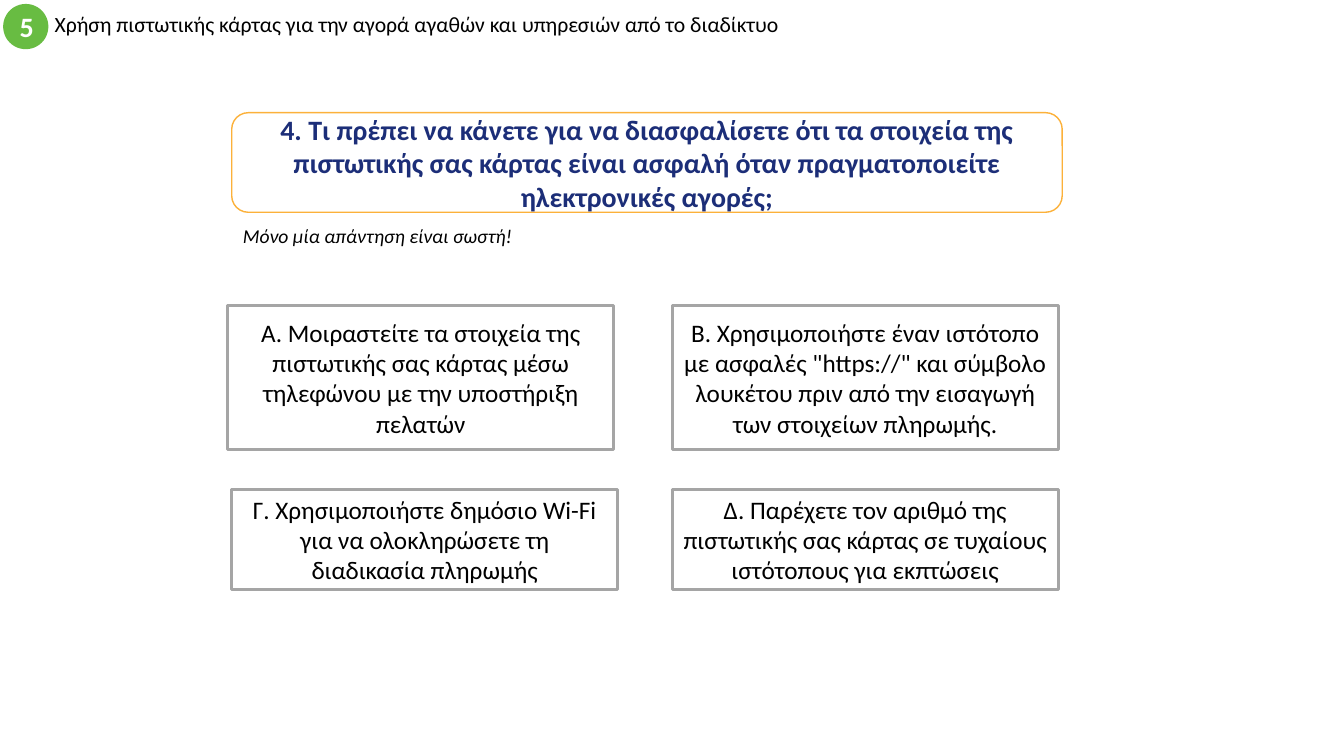
from dataclasses import dataclass

from pptx import Presentation
from pptx.dml.color import RGBColor
from pptx.enum.shapes import MSO_SHAPE
from pptx.enum.text import MSO_ANCHOR, MSO_AUTO_SIZE, PP_ALIGN
from pptx.util import Cm, Pt

LEFT, CENTER = PP_ALIGN.LEFT, PP_ALIGN.CENTER
TOP, MIDDLE = MSO_ANCHOR.TOP, MSO_ANCHOR.MIDDLE
NO_AUTOFIT = MSO_AUTO_SIZE.NONE
OVAL, RECTANGLE = MSO_SHAPE.OVAL, MSO_SHAPE.RECTANGLE
ROUNDED = MSO_SHAPE.ROUNDED_RECTANGLE


@dataclass(frozen=True)
class Theme:
    font: str = "Calibri"
    black: str = "000000"
    white: str = "FFFFFF"
    green: str = "68BC42"
    orange: str = "FCB13A"
    navy: str = "1C2E78"
    gray: str = "A5A5A5"
    topic_size: float = 15.5
    heading_size: float = 20
    hint_size: float = 14
    answer_size: float = 18


theme = Theme()


def write(box, text, size, color, align=CENTER, anchor=MIDDLE, bold=False, italic=False):
    frame = box.text_frame
    frame.text = text
    frame.word_wrap = True
    frame.auto_size = NO_AUTOFIT
    frame.vertical_anchor = anchor
    paragraph = frame.paragraphs[0]
    paragraph.alignment = align
    font = paragraph.font
    font.name, font.size = theme.font, Pt(size)
    font.bold, font.italic = bold, italic
    font.color.rgb = RGBColor.from_string(color)
    return paragraph


def add_panel(kind, left, top, width, height, fill, line=None, line_width=1):
    panel = slide.shapes.add_shape(kind, Cm(left), Cm(top), Cm(width), Cm(height))
    panel.shadow.inherit = False
    panel.fill.solid()
    panel.fill.fore_color.rgb = RGBColor.from_string(fill)
    if line:
        panel.line.color.rgb = RGBColor.from_string(line)
        panel.line.width = Pt(line_width)
    else:
        panel.line.fill.background()
    return panel


presentation = Presentation()
presentation.slide_width = Cm(33.87)
presentation.slide_height = Cm(19.05)
slide = presentation.slides.add_slide(presentation.slide_layouts[5])

topic = slide.shapes.title
topic.left, topic.top, topic.width, topic.height = Cm(1.12), Cm(0.1), Cm(20.32), Cm(1.14)
topic_line = write(
    topic,
    "Χρήση πιστωτικής κάρτας για την αγορά αγαθών και υπηρεσιών από το διαδίκτυο",
    theme.topic_size, theme.black, align=LEFT,
)
topic_line.line_spacing = 0.7

topic_number = add_panel(OVAL, 0.08, 0.1, 1.14, 1.14, theme.green)
topic_number.text_frame.word_wrap = True
write(topic_number, "5", theme.heading_size, theme.white, bold=True)

question = add_panel(ROUNDED, 5.84, 2.84, 20.93, 2.51, theme.white, theme.orange)
write(
    question,
    "4. Τι πρέπει να κάνετε για να διασφαλίσετε ότι τα στοιχεία της πιστωτικής σας "
    "κάρτας είναι ασφαλή όταν πραγματοποιείτε ηλεκτρονικές αγορές;",
    theme.heading_size, theme.navy, bold=True,
)

hint = slide.shapes.add_textbox(Cm(5.87), Cm(5.51), Cm(8.15), Cm(0.86))
write(hint, "Μόνο μία απάντηση είναι σωστή!", theme.hint_size, theme.black,
      align=LEFT, anchor=TOP, italic=True)

answer_rows = [
    (7.7, 3.63, [
        (5.74, "A. Μοιραστείτε τα στοιχεία της πιστωτικής σας κάρτας μέσω τηλεφώνου "
               "με την υποστήριξη πελατών"),
        (16.94, 'B. Χρησιμοποιήστε έναν ιστότοπο με ασφαλές "https://" και σύμβολο '
                "λουκέτου πριν από την εισαγωγή των στοιχείων πληρωμής."),
    ]),
    (12.34, 2.51, [
        (5.84, "Γ. Χρησιμοποιήστε δημόσιο Wi-Fi για να ολοκληρώσετε τη διαδικασία πληρωμής"),
        (16.94, "Δ. Παρέχετε τον αριθμό της πιστωτικής σας κάρτας σε τυχαίους ιστότοπους "
                "για εκπτώσεις"),
    ]),
]
for top, height, answers in answer_rows:
    for left, wording in answers:
        answer = add_panel(RECTANGLE, left, top, 9.73, height, theme.white, theme.gray, 2)
        write(answer, wording, theme.answer_size, theme.black)

presentation.save("out.pptx")
